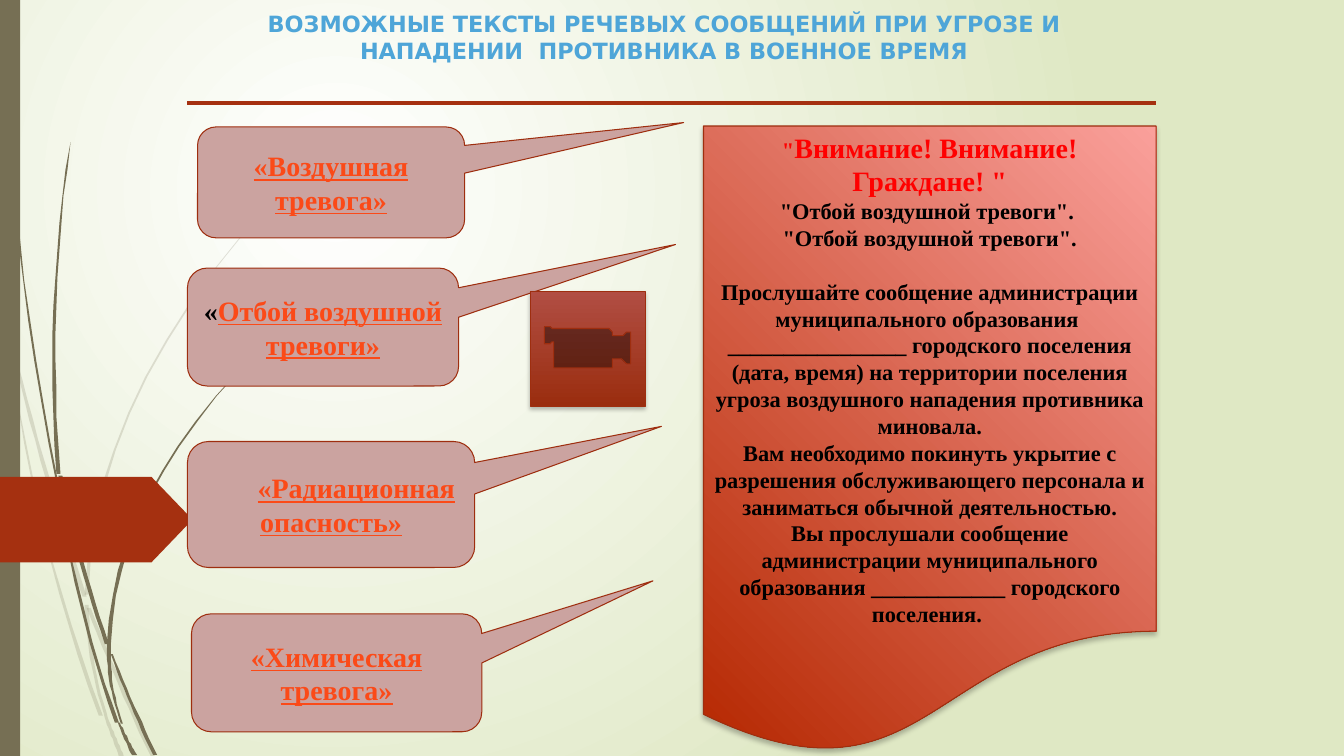
import lxml.etree
import pptx
import pptx.dml.color
import pptx.enum.shapes
import pptx.enum.text
import pptx.oxml.ns
import pptx.util

SERIF, SANS = "Times New Roman", "DejaVu Sans"
OLIVE, RUST, EDGE, ROSE = "766F54", "A53010", "9E2E0F", "CBA3A0"
ORANGE, BLUE, BLACK, RED = "FB4A18", "4EA5D8", "000000", "FF0000"
KIND = pptx.enum.shapes.MSO_SHAPE
ANCHOR = pptx.enum.text.MSO_ANCHOR
CENTER = pptx.enum.text.PP_ALIGN.CENTER
UNIT = 100
STEPS = 12

# start, bend, end, start width, end width
PALE = {
    "tip": ((0, 2.9), (0.05, 3.15), (0.11, 3.5), 0.04, 0.01),
    "stem": ((0.15, 3.55), (0.46, 4.8), (0.84, 5.92), 0.03, 0.05),
    "foot": ((0.88, 6.03), (1.18, 6.8), (1.52, 7.51), 0.03, 0.05),
    "inner": ((0.11, 3.5), (0.33, 5.3), (1, 7.1), 0.01, 0.04),
    "branch": ((3.12, 1.54), (0.92, 3.75), (0.86, 5.9), 0.01, 0.03),
    "joint": ((0.86, 6), (0.87, 6.5), (1.04, 7.08), 0.04, 0.03),
    "root": ((1.04, 7.08), (1.12, 7.3), (1.21, 7.51), 0.03, 0.05),
}
DARK = {
    "tip": ((0.04, 0), (0.07, 2.35), (0.57, 4.8), 0.01, 0.02),
    "stem": ((0.6, 4.72), (0.79, 5.6), (1.06, 6.39), 0.03, 0.04),
    "foot": ((1.11, 6.49), (1.3, 7), (1.54, 7.49), 0.02, 0.05),
    "inner": ((0.57, 4.77), (0.74, 6), (1.16, 7.17), 0.01, 0.04),
    "blade": ((0.7, 1.41), (0.45, 3), (0.58, 4.7), 0.01, 0.04),
    "branch": ((2.6, 3.44), (1.12, 4.92), (1.08, 6.4), 0.01, 0.04),
    "joint": ((1.08, 6.4), (1.07, 6.8), (1.21, 7.18), 0.04, 0.02),
    "root": ((1.18, 7.17), (1.25, 7.33), (1.33, 7.49), 0.02, 0.05),
}
TITLE = ("ВОЗМОЖНЫЕ ТЕКСТЫ РЕЧЕВЫХ СООБЩЕНИЙ ПРИ УГРОЗЕ И "
         "НАПАДЕНИИ  ПРОТИВНИКА В ВОЕННОЕ ВРЕМЯ")
SIGNALS = [
    {"box": (1.96, 1.26, 2.65, 1.1), "tip": (1.32, -0.54),
     "text": "«Воздушная тревога»"},
    {"box": (1.86, 2.66, 2.69, 1.17), "tip": (1.3, -0.7),
     "text": "Отбой воздушной тревоги»", "quote": "«"},
    {"box": (1.86, 4.38, 2.85, 1.25), "tip": (1.15, -0.62),
     "text": "«Радиационная опасность»", "indent": 0.5},
    {"box": (1.9, 6.09, 2.88, 1.17), "tip": (1.09, -0.78),
     "text": "«Химическая тревога»"},
]
NOTICE = [
    "\"Отбой воздушной тревоги\". ",
    "\"Отбой воздушной тревоги\".",
    "Прослушайте сообщение администрации муниципального образования  "
    "________________ городского поселения (дата, время) на территории поселения "
    "угроза воздушного нападения противника миновала.",
    "Вам необходимо покинуть укрытие с разрешения обслуживающего персонала и "
    "заниматься обычной деятельностью.",
    "Вы прослушали сообщение администрации муниципального образования "
    "____________ городского поселения. ",
]


def size(inches):
    return pptx.util.Cm(inches * 2.54)


def color(code):
    return pptx.dml.color.RGBColor.from_string(code)


def node(parent, tag, **attrs):
    return lxml.etree.SubElement(parent, pptx.oxml.ns.qn(tag), attrs)


def find(parent, tag):
    return parent.find(".//" + pptx.oxml.ns.qn(tag))


def paint(shape, fill, edge=None):
    shape.shadow.inherit = False
    shape.fill.solid()
    shape.fill.fore_color.rgb = color(fill)
    if edge:
        shape.line.color.rgb = color(edge)
        shape.line.width = pptx.util.Pt(0.75)
    else:
        shape.line.fill.background()


def blend(fill, start, end):
    fill.gradient()
    for stop, code, place in zip(fill.gradient_stops, (start, end), (0, 1)):
        stop.color.rgb = color(code)
        stop.position = place


def glow(slide):
    blend(slide.background.fill, "FFFFFF", "DFE8C4")
    grad = find(slide.element, "a:gradFill")
    grad.remove(find(grad, "a:lin"))
    ring = node(grad, "a:path", path="circle")
    node(ring, "a:fillToRect", l="50000", t="50000", r="100000", b="100000")


def curve(start, bend, end, t):
    return [(1 - t) ** 2 * a + 2 * t * (1 - t) * b + t ** 2 * c
            for a, b, c in zip(start, bend, end)]


def blade(slide, start, bend, end, thin, thick, alpha):
    left, right = [], []
    for step in range(STEPS + 1):
        t = step / STEPS
        x, y = curve(start, bend, end, t)
        half = (thin + (thick - thin) * t) / 2
        left.append(((x - half) * UNIT, y * UNIT))
        right.append(((x + half) * UNIT, y * UNIT))
    draft = slide.shapes.build_freeform(*left[0], scale=size(1 / UNIT))
    draft.add_line_segments(left[1:] + right[::-1], close=True)
    shape = draft.convert_to_shape()
    paint(shape, OLIVE)
    if alpha < 100:
        node(find(shape.element, "a:srgbClr"), "a:alpha", val=str(alpha * 1000))


def grass(slide):
    for tuft, alpha in ((PALE, 20), (DARK, 100)):
        for stroke in tuft.values():
            blade(slide, *stroke, alpha)


def block(slide, kind, box, fill, edge=None):
    shape = slide.shapes.add_shape(kind, *map(size, box))
    paint(shape, fill, edge)
    return shape


def panel(slide, kind, box, start, end, angle):
    shape = block(slide, kind, box, start, EDGE)
    blend(shape.fill, start, end)
    shape.fill.gradient_angle = angle
    shade = node(find(shape.element, "a:effectLst"), "a:outerShdw", blurRad="38100",
                 dist="25400", dir="5400000", rotWithShape="0")
    node(node(shade, "a:srgbClr", val=BLACK), "a:alpha", val="25000")
    return shape


def write(para, text, points, code, face=SERIF, under=None):
    para.alignment = CENTER
    run = para.add_run()
    run.text = text
    font = run.font
    font.size = pptx.util.Pt(points)
    font.name = face
    font.bold = True
    font.underline = under
    font.color.rgb = color(code)


def callout(slide, box, tip, text, quote="", indent=0):
    shape = block(slide, KIND.ROUNDED_RECTANGULAR_CALLOUT, box, ROSE, EDGE)
    shape.adjustments[0], shape.adjustments[1] = tip
    shape.text_frame.vertical_anchor = ANCHOR.MIDDLE
    para = shape.text_frame.paragraphs[0]
    if quote:
        write(para, quote, 20, BLACK)
    write(para, text, 20, ORANGE, under=True)
    if indent:
        find(shape.element, "a:pPr").set("indent", str(size(indent)))


def heading(slide):
    box = slide.shapes.add_textbox(*map(size, (2.06, 0.23, 9.06, 0.45)))
    frame = box.text_frame
    frame.word_wrap = True
    frame.vertical_anchor = ANCHOR.BOTTOM
    frame.margin_left = frame.margin_right = size(0.05)
    frame.margin_top = frame.margin_bottom = size(0.05)
    write(frame.paragraphs[0], TITLE, 16, BLUE, SANS)


def rule(slide):
    line = slide.shapes.add_connector(pptx.enum.shapes.MSO_CONNECTOR.STRAIGHT,
                                      *map(size, (1.86, 1.02, 11.47, 1.02)))
    line.line.color.rgb = color(RUST)
    line.line.width = pptx.util.Pt(3)
    node(line.element.spPr, "a:effectLst")


def notice(slide):
    shape = panel(slide, KIND.FLOWCHART_DOCUMENT, (6.98, 1.25, 4.49, 6.25),
                  "B52700", "FAA09B", 45)
    frame = shape.text_frame
    frame.vertical_anchor = ANCHOR.MIDDLE
    alert = frame.paragraphs[0]
    write(alert, "\"", 16, RED)
    write(alert, "Внимание! Внимание! Граждане! \"", 20, RED)
    paras = [frame.add_paragraph() for text in NOTICE]
    for para, text in zip(paras, NOTICE):
        write(para, text, 16, BLACK)
    paras[2].space_before = pptx.util.Pt(19)


def main():
    deck = pptx.Presentation()
    deck.slide_width, deck.slide_height = pptx.util.Cm(33.87), pptx.util.Cm(19.05)
    slide = deck.slides.add_slide(deck.slide_layouts[6])
    glow(slide)
    grass(slide)
    block(slide, KIND.RECTANGLE, (0, 0, 0.2, 7.5), OLIVE)
    arrow = block(slide, KIND.PENTAGON, (0, 4.73, 1.91, 0.85), RUST)
    arrow.adjustments[0] = 0.48
    rule(slide)
    heading(slide)
    for signal in SIGNALS:
        callout(slide, **signal)
    notice(slide)
    panel(slide, KIND.ACTION_BUTTON_MOVIE, (5.26, 2.89, 1.14, 1.14),
          "B14E43", "9A2D0F", 270)
    deck.save("out.pptx")


if __name__ == "__main__":
    main()
